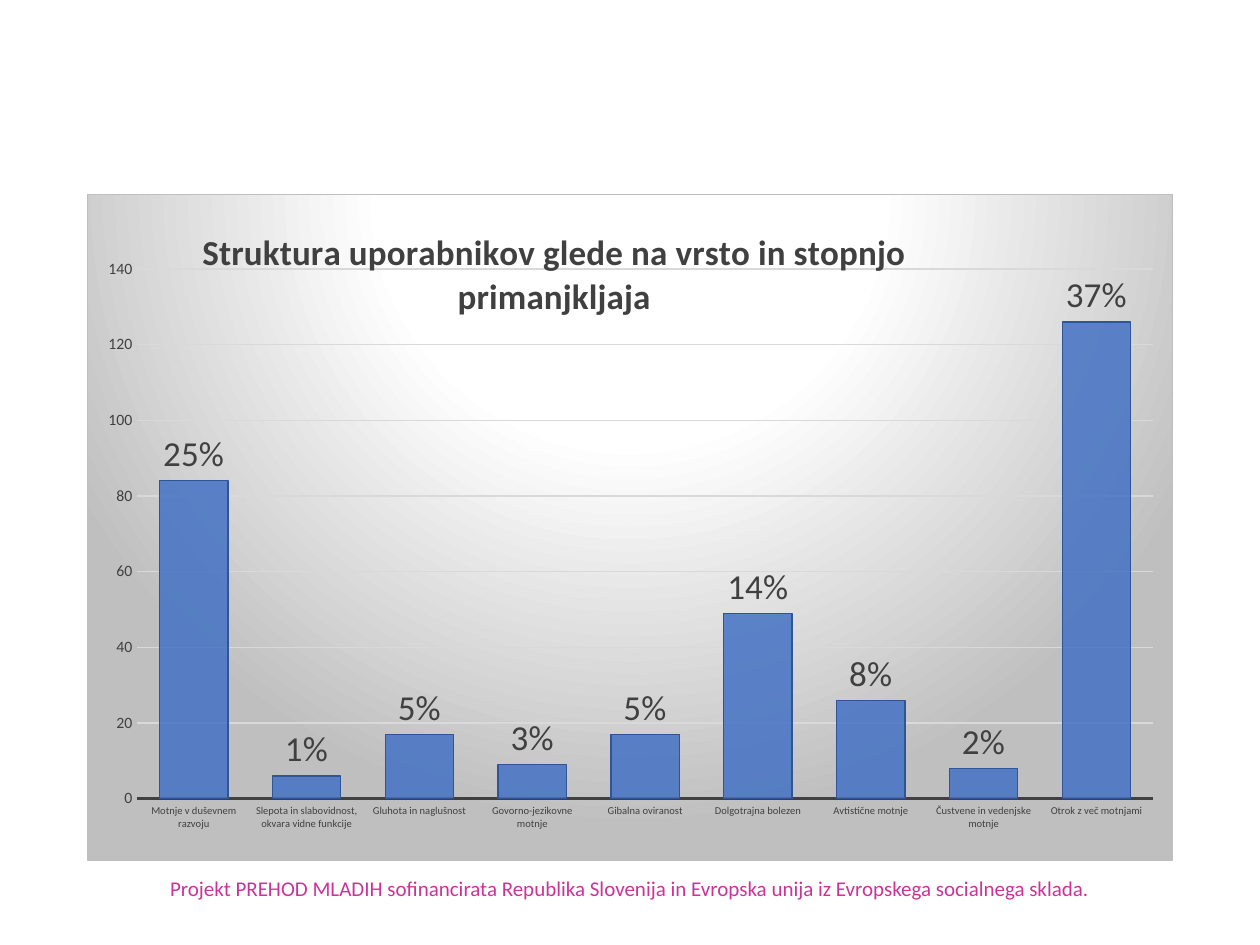
from lxml.etree import SubElement
from pptx import Presentation
from pptx.chart.data import CategoryChartData
from pptx.dml.color import RGBColor
from pptx.enum.chart import XL_CHART_TYPE, XL_LABEL_POSITION, XL_TICK_MARK
from pptx.enum.text import MSO_ANCHOR, PP_ALIGN
from pptx.oxml import parse_xml
from pptx.oxml.ns import nsdecls, qn
from pptx.util import Cm, Pt

TITLE = "Struktura uporabnikov glede na vrsto in stopnjo primanjkljaja"
CAPTION = ("Projekt PREHOD MLADIH sofinancirata Republika Slovenija in Evropska unija "
           "iz Evropskega socialnega sklada.")
GROUPS = [  # category, number of users, share
    ("Motnje v duševnem razvoju", 84, "25%"),
    ("Slepota in slabovidnost, okvara vidne funkcije", 6, "1%"),
    ("Gluhota in naglušnost", 17, "5%"),
    ("Govorno-jezikovne motnje", 9, "3%"),
    ("Gibalna oviranost", 17, "5%"),
    ("Dolgotrajna bolezen", 49, "14%"),
    ("Avtistične motnje", 26, "8%"),
    ("Čustvene in vedenjske motnje", 8, "2%"),
    ("Otrok z več motnjami", 126, "37%"),
]
COLORS = {"bar": "4472C4", "bar_edge": "2F5597", "text": "404040", "grid": "D9D9D9",
          "caption": "CC3399", "center": "FFFFFF", "rim": "BFBFBF"}
FONT = "Calibri"
LEFT, WIDTH = Cm(1.75), Cm(21.9)


def rgb(name):
    return RGBColor.from_string(COLORS[name])


def style_font(font, size, color="text", bold=False):
    font.name, font.size, font.bold = FONT, Pt(size), bold
    font.color.rgb = rgb(color)


def write_text(frame, text, *, size, color="text", bold=False, align=PP_ALIGN.CENTER):
    para = frame.paragraphs[0]
    para.alignment = align
    span = para.add_run()
    span.text = text
    style_font(span.font, size, color, bold)


def style_line(line, color, width):
    line.color.rgb = rgb(color)
    line.width = Pt(width)


def place(parent, index, **settings):
    """Give a chart part a manual layout."""
    for old in parent.findall(qn("c:layout")):
        parent.remove(old)
    layout = parse_xml(f"<c:layout {nsdecls('c')}><c:manualLayout/></c:layout>")
    for tag, value in settings.items():
        SubElement(layout[0], qn(f"c:{tag}")).set("val", str(value))
    parent.insert(index, layout)


deck = Presentation()
deck.slide_width, deck.slide_height = Cm(25.4), Cm(19.05)
page = deck.slides.add_slide(deck.slide_layouts[6])

# Caption
box = page.shapes.add_textbox(LEFT, Cm(17.65), WIDTH, Cm(1.02))
frame = box.text_frame
frame.word_wrap = True
frame.vertical_anchor = MSO_ANCHOR.TOP
frame.margin_top = frame.margin_bottom = 0
write_text(frame, CAPTION, size=12, color="caption")

# Chart and its title
names, counts, shares = zip(*GROUPS)
data = CategoryChartData()
data.categories = names
data.add_series("Series 1", counts)
chart = page.shapes.add_chart(XL_CHART_TYPE.COLUMN_CLUSTERED, LEFT, Cm(3.91),
                              WIDTH, Cm(13.44), data).chart
chart.has_legend = False
style_font(chart.font, 10)
chart.has_title = True
write_text(chart.chart_title.text_frame, TITLE, size=20, bold=True)
title = chart.chart_title._element
place(title, 1, xMode="edge", yMode="edge", x=0.1, y=0.04)
place(chart._chartSpace.chart.plotArea, 0, layoutTarget="inner", xMode="edge",
      yMode="edge", x=0.046, y=0.112, w=0.936, h=0.796)

# Chart background
stops = "".join(f'<a:gs pos="{pos}"><a:srgbClr val="{COLORS[name]}"/></a:gs>'
                for pos, name in ((0, "center"), (39000, "center"), (100000, "rim")))
chart._chartSpace.find(qn("c:txPr")).addprevious(parse_xml(
    f'<c:spPr {nsdecls("c", "a")}><a:gradFill><a:gsLst>{stops}</a:gsLst>'
    '<a:path path="circle"><a:fillToRect l="50000" t="-80000" r="50000" b="180000"/></a:path>'
    f'</a:gradFill><a:ln w="{Pt(0.75)}"><a:solidFill><a:srgbClr val="{COLORS["rim"]}"/>'
    '</a:solidFill></a:ln></c:spPr>'))

# Axes
for axis, size in ((chart.category_axis, 6), (chart.value_axis, 9)):
    axis.major_tick_mark = axis.minor_tick_mark = XL_TICK_MARK.NONE
    style_font(axis.tick_labels.font, size)
style_line(chart.category_axis.format.line, "text", 1.5)
values = chart.value_axis
values.minimum_scale, values.maximum_scale, values.major_unit = 0, 140, 20
values.format.line.fill.background()
style_line(values.major_gridlines.format.line, "grid", 0.75)

# Columns
plot = chart.plots[0]
plot.gap_width = 65
plot.vary_by_categories = False
series = plot.series[0]
series.format.fill.solid()
series.format.fill.fore_color.rgb = rgb("bar")
bar_color = series._element.find(".//" + qn("a:srgbClr"))
SubElement(bar_color, qn("a:alpha")).set("val", "85000")
style_line(series.format.line, "bar_edge", 0.75)

# Share labels
labels = series.data_labels
labels.show_value = True
labels.position = XL_LABEL_POSITION.OUTSIDE_END
style_font(labels.font, 20)
for index, share in enumerate(shares):
    label = series.points[index].data_label
    write_text(label.text_frame, share, size=20)
    label.position = XL_LABEL_POSITION.OUTSIDE_END

deck.save("out.pptx")
